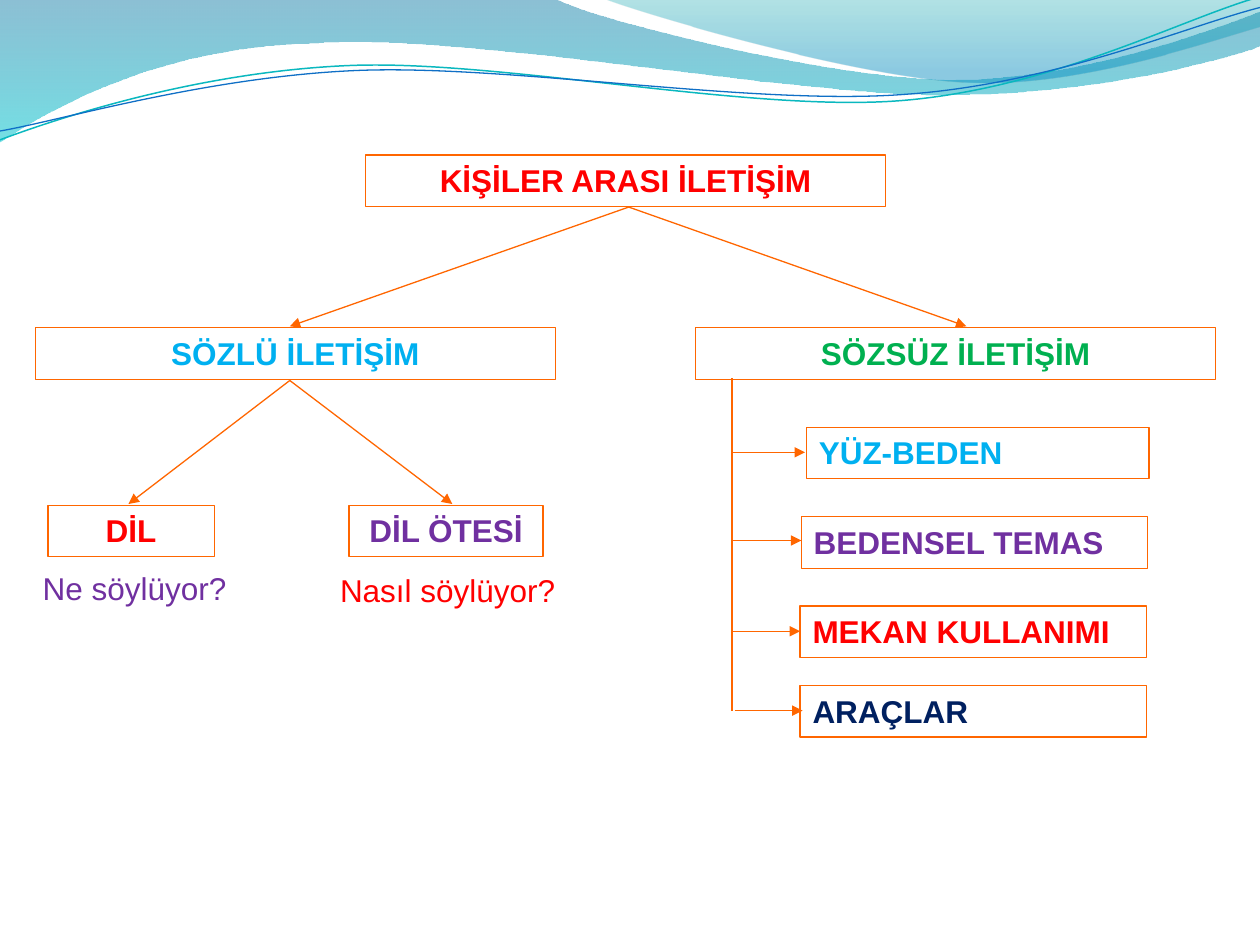
from math import cos, radians, sin

from lxml import etree
from pptx import Presentation
from pptx.dml.color import RGBColor
from pptx.enum.shapes import MSO_CONNECTOR, MSO_SHAPE
from pptx.enum.text import MSO_ANCHOR, PP_ALIGN
from pptx.oxml.ns import qn
from pptx.util import Inches, Pt

RECTANGLE = MSO_SHAPE.RECTANGLE
STRAIGHT = MSO_CONNECTOR.STRAIGHT
TOP = MSO_ANCHOR.TOP
LEFT, CENTER = PP_ALIGN.LEFT, PP_ALIGN.CENTER

FONT = "Arial"
ORANGE, RED, PURPLE = "FF6600", "FF0000", "7030A0"
SKY, GREEN, NAVY = "00B0F0", "00B050", "002060"
BOX_HEIGHT = 0.41
WIDE = 4.13
TILT = 2.7

# Each outline is a start point followed by lines (one point) and curves (three points).
LEFT_BAND = [
    [(0, 0)], [(4.4, -0.01)],
    [(4.76, 0.17), (6.64, 0.63), (7.58, 0.63)],
    [(8.53, 0.63), (9.58, 0.26), (10, 0.09)],
    [(10.01, 0.36)],
    [(9.83, 0.44), (8.7, 0.76), (7.46, 0.75)],
    [(6.22, 0.75), (3.82, 0.28), (2.57, 0.34)],
    [(1.29, 0.36), (0.46, 0.83), (-0.01, 1.13)],
    [(0, 0)],
]
RIGHT_BAND = [
    [(4.79, -0.01)],
    [(5.09, 0.11), (6.82, 0.62), (7.69, 0.65)],
    [(8.56, 0.69), (9.61, 0.32), (10, 0.21)],
    [(10, 0)], [(4.79, -0.01)],
]
TEAL_WAVE = [
    [(0, 1.11)],
    [(0.48, 0.93), (1.58, 0.57), (2.77, 0.52)],
    [(3.95, 0.47), (5.93, 0.89), (7.13, 0.8)],
    [(8.33, 0.71), (9.38, 0.15), (9.98, -0.02)],
]
BLUE_WAVE = [
    [(0, 1.04)],
    [(0.47, 0.96), (1.64, 0.61), (2.83, 0.56)],
    [(4.03, 0.51), (5.97, 0.84), (7.17, 0.75)],
    [(8.36, 0.67), (9.41, 0.21), (10, 0.06)],
]


def color(value):
    return RGBColor.from_string(value)


def set_line(line, value, width=0.75):
    line.color.rgb = color(value)
    line.width = Pt(width)


def add_outline(shapes, segments, close):
    """Build a freeform, then join each three points of a curve into one Bézier."""
    points = [(Inches(x), Inches(y)) for segment in segments for x, y in segment]
    builder = shapes.build_freeform(*points[0])
    builder.add_line_segments(points[1:], close=close)
    outline = builder.convert_to_shape()
    outline.shadow.inherit = False
    steps = iter(list(outline._element.iter(qn("a:lnTo"))))
    for segment in segments[1:]:
        parts = [next(steps) for _ in segment]
        if len(parts) == 3:
            curve = etree.Element(qn("a:cubicBezTo"))
            parts[0].addprevious(curve)
            for part in parts:
                curve.append(part[0])
                part.getparent().remove(part)
    return outline


def add_band(page, segments, stops):
    """Add a filled wave; stops hold position, colour and opacity percent."""
    band = add_outline(page.shapes, segments, True)
    band.line.fill.background()
    band.fill.gradient()
    band.fill.gradient_angle = 270
    for stop, (position, value, opacity) in zip(band.fill.gradient_stops, stops):
        stop.position = position
        stop.color.rgb = color(value)
    tints = band._element.spPr.iter(qn("a:srgbClr"))
    for tint, (position, value, opacity) in zip(tints, stops):
        etree.SubElement(tint, qn("a:alpha"), val=str(opacity * 1000))


def turn(point, center, degrees):
    angle = radians(degrees)
    x, y = point[0] - center[0], point[1] - center[1]
    return (center[0] + x * cos(angle) - y * sin(angle),
            center[1] + x * sin(angle) + y * cos(angle))


def add_wave(group, segments, center, value, width):
    """Add an open wave, drawn level and tilted by its rotation."""
    level = [[turn(point, center, TILT) for point in segment] for segment in segments]
    wave = add_outline(group.shapes, level, False)
    wave.rotation = 360 - TILT
    wave.fill.background()
    set_line(wave.line, value, width)


def add_header(page):
    add_band(page, LEFT_BAND, [(0, "0074A1", 45), (1, "00C6CF", 55)])
    add_band(page, RIGHT_BAND, [(0, "00A1A9", 30), (0.8, "008BBF", 45)])
    group = page.shapes.add_group_shape()
    add_wave(group, TEAL_WAVE, (4.99, 0.58), "0AB8BF", 0.85)
    add_wave(group, BLUE_WAVE, (5, 0.59), "0F6FC6", 0.75)


def write(frame, text, value, bold, align):
    frame.text = text
    para = frame.paragraphs[0]
    para.alignment = align
    font = para.runs[0].font
    font.name, font.size, font.bold = FONT, Pt(18), bold
    font.color.rgb = color(value)


def add_box(page, left, top, width, text, value, align=CENTER):
    box = page.shapes.add_shape(
        RECTANGLE, Inches(left), Inches(top), Inches(width), Inches(BOX_HEIGHT))
    box.shadow.inherit = False
    box.fill.background()
    set_line(box.line, ORANGE)
    box.text_frame.word_wrap = True
    box.text_frame.vertical_anchor = TOP
    write(box.text_frame, text, value, True, align)


def add_note(page, left, top, width, text, value):
    note = page.shapes.add_textbox(Inches(left), Inches(top), Inches(width), Inches(0.4))
    note.text_frame.word_wrap = False
    write(note.text_frame, text, value, False, LEFT)


def add_link(page, start, end, arrow=True):
    link = page.shapes.add_connector(STRAIGHT, *(Inches(n) for n in (*start, *end)))
    set_line(link.line, ORANGE)
    if arrow:
        etree.SubElement(link.line._get_or_add_ln(), qn("a:tailEnd"), type="triangle")
    etree.SubElement(link._element.spPr, qn("a:effectLst"))


def add_root(page, left, top):
    add_box(page, left, top, WIDE, "KİŞİLER ARASI İLETİŞİM", RED)
    for start, end in ((5, 2.3), (4.98, 7.67)):
        add_link(page, (start, top + BOX_HEIGHT), (end, top + 1.36))


def add_verbal_branch(page, left, top):
    add_box(page, left, top, WIDE, "SÖZLÜ İLETİŞİM", SKY)
    for end, offset, width, text, value in (
            (0.74, 0.1, 1.32, "DİL", RED),
            (3.31, 2.49, 1.54, "DİL ÖTESİ", PURPLE)):
        add_link(page, (left + 2.02, top + 0.42), (left + end, top + 1.4))
        add_box(page, left + offset, top + 1.41, width, text, value)
    add_note(page, left - 0.04, top + 1.87, 1.66, "Ne söylüyor?", PURPLE)
    add_note(page, left + 2.32, top + 1.88, 1.91, "Nasıl söylüyor?", RED)


def add_nonverbal_branch(page, left, top):
    add_box(page, left, top, WIDE, "SÖZSÜZ İLETİŞİM", GREEN)
    trunk = left + 0.29
    add_link(page, (trunk, top + 0.4), (trunk, top + 3.04), arrow=False)
    # Box left, top and width, then the link's start, end and height.
    leaves = [
        (0.88, 0.79, 2.72, 0.3, 0.87, 0.99, "YÜZ-BEDEN", SKY),
        (0.84, 1.5, 2.75, 0.3, 0.84, 1.69, "BEDENSEL TEMAS", PURPLE),
        (0.83, 2.21, 2.75, 0.29, 0.83, 2.41, "MEKAN KULLANIMI", RED),
        (0.83, 2.84, 2.75, 0.31, 0.85, 3.04, "ARAÇLAR", NAVY),
    ]
    for box_left, box_top, width, start, end, height, text, value in leaves:
        add_box(page, left + box_left, top + box_top, width, text, value, LEFT)
        add_link(page, (left + start, top + height), (left + end, top + height))


def main():
    deck = Presentation()
    deck.slide_width, deck.slide_height = Inches(10), Inches(7.5)
    page = deck.slides.add_slide(deck.slide_layouts[6])
    add_header(page)
    add_root(page, 2.9, 1.23)
    add_verbal_branch(page, 0.28, 2.6)
    add_nonverbal_branch(page, 5.52, 2.6)
    deck.save("out.pptx")


if __name__ == "__main__":
    main()
